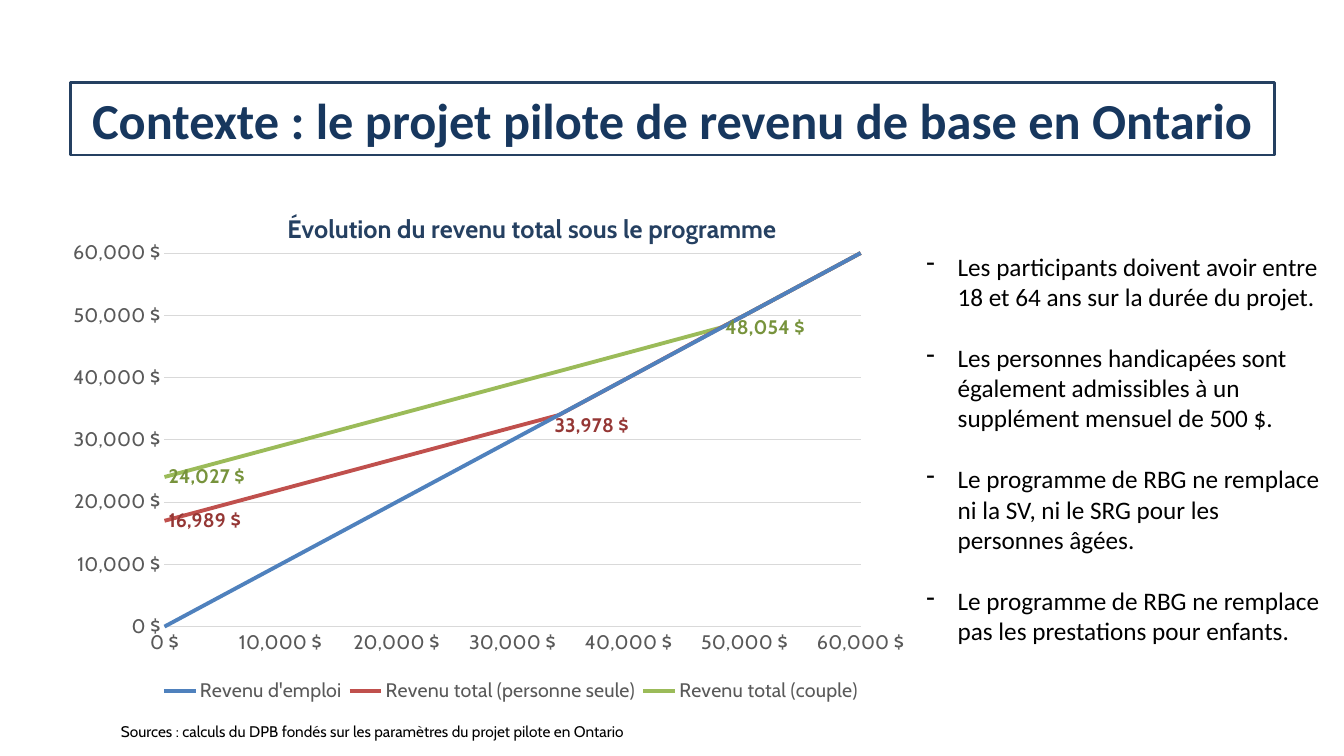
from lxml import etree
from pptx import Presentation
from pptx.chart.data import XyChartData as XyData
from pptx.dml.color import RGBColor as RGB
from pptx.enum.chart import (XL_CHART_TYPE as KIND, XL_LABEL_POSITION as SPOT,
                             XL_LEGEND_POSITION as KEY, XL_TICK_MARK as TICK)
from pptx.enum.text import MSO_ANCHOR as ANCHOR, MSO_AUTO_SIZE as FIT, PP_ALIGN as ALIGN
from pptx.oxml import parse_xml
from pptx.oxml.ns import qn
from pptx.util import Inches, Pt

HEX = dict(navy="254061", title="17375E", ink="000000", grey="595959", grid="D9D9D9",
           blue="4F81BD", red="C0504D", green="9BBB59", wine="953735", olive="77933C")
MONEY = '#,##0\\ "$"'
NS = "http://schemas.openxmlformats.org/drawingml/2006/chart"

PAY = [0, 10000, 20000, 30000, 34000, 40000, 48000, 50000, 60000]
# name, line colour, values, {point: label colour}
LINES = [
    ("Revenu d'emploi", "blue", PAY, {}),
    ("Revenu total (personne seule)", "red",
     [16989, 21989, 26989, 31989, 33978, 40000, 48054, 50000, 60000],
     {0: "wine", 4: "wine", 6: "olive"}),
    ("Revenu total (couple)", "green",
     [24027, 29027, 34027, 39027, 41016, 44027, 48054, 50000, 60000], {0: "olive"}),
]
NOTES = [
    "Les participants doivent avoir entre 18 et 64 ans sur la durée du projet.",
    "Les personnes handicapées sont également admissibles à un supplément mensuel de 500 $.",
    "Le programme de RBG ne remplace ni la SV, ni le SRG pour les personnes âgées.",
    "Le programme de RBG ne remplace pas les prestations pour enfants.",
]


def style(font, size, color, face="Cabin", bold=False):
    font.name, font.size, font.bold = face, Pt(size), bold
    font.color.rgb = RGB.from_string(HEX[color])


def write(frame, texts, bullet=None, hang=0, gap=0, align=ALIGN.LEFT, **look):
    """Fill a text frame with one paragraph per text; look goes to style()."""
    for i, text in enumerate(texts):
        para = frame.paragraphs[0] if i == 0 else frame.add_paragraph()
        para.alignment = align
        if i:
            para.space_before = Pt(gap)
        if hang:
            props = para._p.get_or_add_pPr()
            props.set("marL", str(Inches(hang)))
            props.set("indent", str(-Inches(hang)))
            if bullet:
                etree.SubElement(props, qn("a:buChar")).set("char", bullet)
        run = para.add_run()
        run.text = text
        style(run.font, **look)


def place(node, index, inner=False, **sides):
    """Give a chart part a manual layout, in fractions of the chart."""
    for old in node.findall(qn("c:layout")):
        node.remove(old)
    parts = '<c:layoutTarget val="inner"/>' if inner else ""
    if "w" in sides:
        parts += '<c:xMode val="edge"/><c:yMode val="edge"/>'
    elif node.tag == qn("c:title"):
        parts += '<c:xMode val="edge"/><c:yMode val="edge"/>'
    parts += "".join(f'<c:{k} val="{v}"/>' for k, v in sides.items())
    node.insert(index, parse_xml(f'<c:layout xmlns:c="{NS}"><c:manualLayout>{parts}'
                                 '</c:manualLayout></c:layout>'))


class Deck:
    def __init__(self):
        self.show = Presentation()
        self.show.slide_width, self.show.slide_height = Inches(13.33), Inches(7.5)
        self.slide = self.show.slides.add_slide(self.show.slide_layouts[5])

    def title(self, box, text):
        shape = self.slide.shapes.title
        shape.left, shape.top, shape.width, shape.height = map(Inches, box)
        shape.line.color.rgb = RGB.from_string(HEX["navy"])
        shape.line.width = Pt(1.75)
        frame = shape.text_frame
        frame.auto_size, frame.vertical_anchor = FIT.NONE, ANCHOR.MIDDLE
        write(frame, [text], align=ALIGN.CENTER, face="Calibri", size=36,
              color="title", bold=True)

    def text(self, box, texts, **look):
        frame = self.slide.shapes.add_textbox(*map(Inches, box)).text_frame
        frame.word_wrap, frame.auto_size = True, FIT.SHAPE_TO_FIT_TEXT
        write(frame, texts, **look)

    def axis(self, axis, grid):
        axis.minimum_scale, axis.maximum_scale, axis.major_unit = 0, 60000, 10000
        axis.major_tick_mark = axis.minor_tick_mark = TICK.NONE
        axis.has_major_gridlines = grid
        if grid:
            line = axis.major_gridlines.format.line
            line.color.rgb, line.width = RGB.from_string(HEX["grid"]), Pt(0.75)
        axis.format.line.fill.background()
        axis.tick_labels.number_format = MONEY
        axis.tick_labels.number_format_is_linked = False
        style(axis.tick_labels.font, 14, "grey")

    def label(self, series, index, color):
        label = series.points[index].data_label
        style(label.font, 14, color, bold=True)
        label.position = SPOT.RIGHT
        node = series._element.xpath(f"c:dLbls/c:dLbl[c:idx/@val='{index}']")[0]
        form = etree.Element(qn("c:numFmt"), formatCode=MONEY, sourceLinked="0")
        node.find(qn("c:txPr")).addprevious(form)
        if index == 4:
            place(node, 1, x=-0.01, y=0.02)
        series._element.xpath("c:dLbls/c:showVal")[0].set("val", "0")

    def chart(self, box, title):
        data = XyData(number_format=MONEY)
        for name, _, values, _ in LINES:
            series = data.add_series(name)
            for x, y in zip(PAY, values):
                series.add_data_point(x, y)
        chart = self.slide.shapes.add_chart(KIND.XY_SCATTER_LINES_NO_MARKERS,
                                            *map(Inches, box), data).chart
        style(chart.font, 10, "ink", "Calibri")
        head = chart.chart_title
        write(head.text_frame, [title], align=ALIGN.CENTER, size=18, color="navy", bold=True)
        place(head._element, 1, x=0.25, y=0.04)
        self.axis(chart.category_axis, False)
        self.axis(chart.value_axis, True)

        chart.has_legend = True
        legend = chart.legend
        legend.position, legend.include_in_layout = KEY.BOTTOM, False
        style(legend.font, 14, "grey")
        place(legend._element, 1, x=0.1, y=0.92, w=0.84, h=0.06)
        area = chart._chartSpace.chart.plotArea
        place(area, 0, inner=True, x=0.11, y=0.127, w=0.824, h=0.702)

        plot = chart.plots[0]
        plot.vary_by_categories = False
        for series, (_, color, _, labels) in zip(plot.series, LINES):
            series.smooth = False
            line = series.format.line
            line.color.rgb, line.width = RGB.from_string(HEX[color]), Pt(2.75)
            for index, shade in labels.items():
                self.label(series, index, shade)


def main():
    deck = Deck()
    deck.title((0.7, 0.82, 11.94, 0.72),
               "Contexte : le projet pilote de revenu de base en Ontario")
    deck.chart((0.71, 1.84, 8.38, 5.28), "Évolution du revenu total sous le programme")
    deck.text((9.09, 2.44, 4.14, 4.34), NOTES, bullet="-", hang=0.31, gap=22,
              face="Calibri", size=18, color="ink")
    deck.text((1.1, 7.11, 8.77, 0.29),
              ["Sources : calculs du DPB fondés sur les paramètres du projet pilote en Ontario"],
              hang=0.62, size=11, color="ink")
    deck.show.save("out.pptx")


if __name__ == "__main__":
    main()
